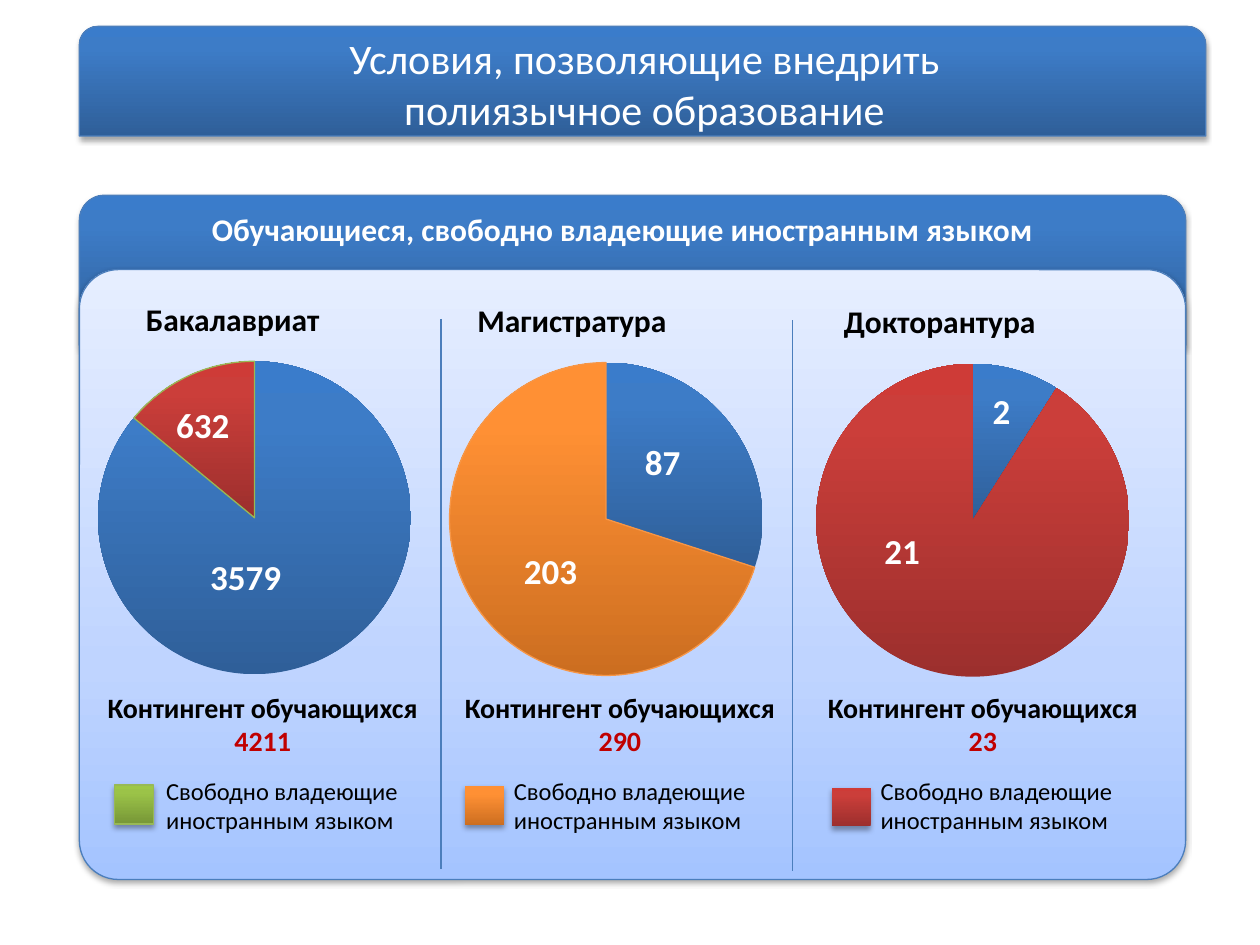
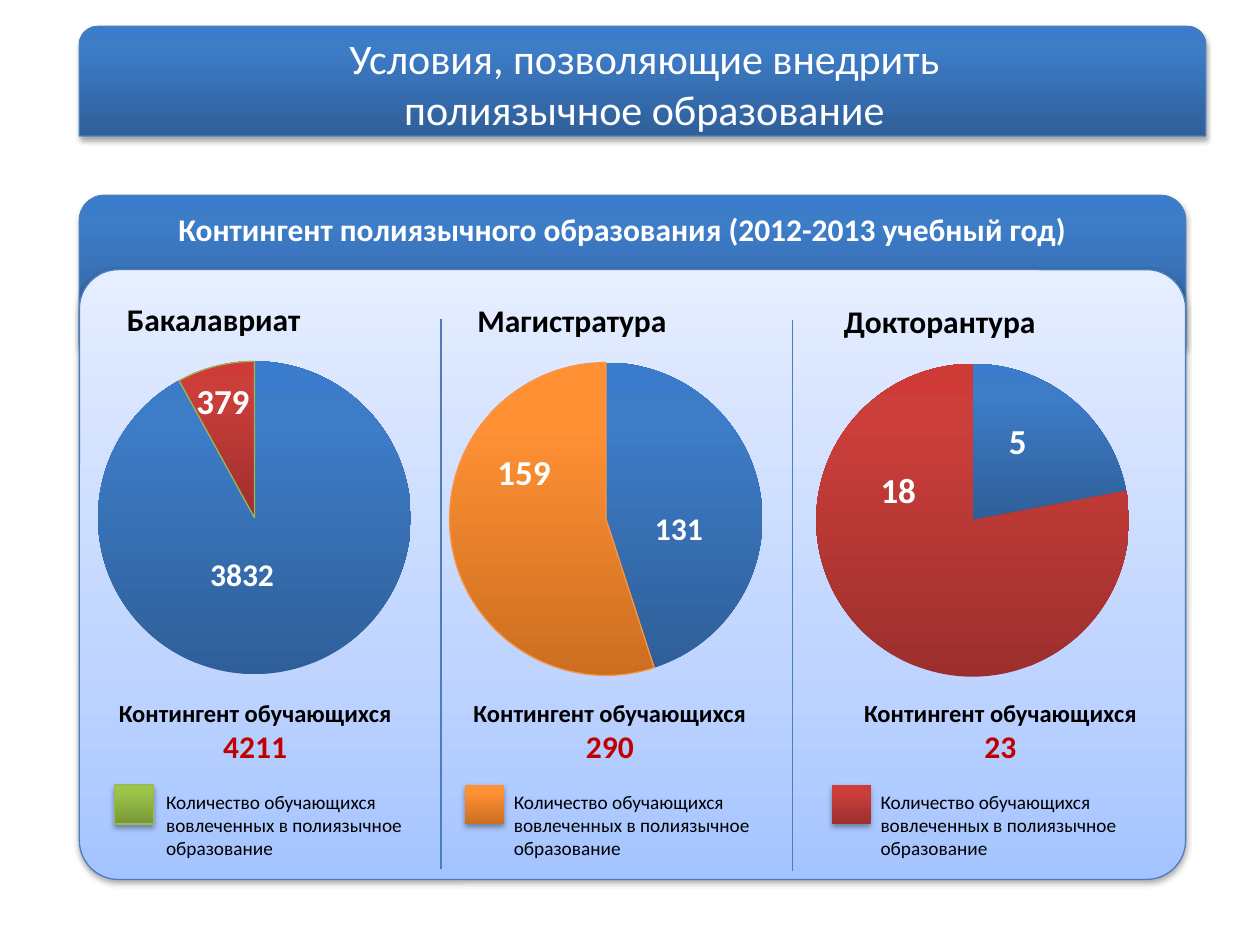
from dataclasses import dataclass
from typing import Optional

from lxml import etree
from pptx import Presentation
from pptx import util as u
from pptx.chart import data as chart_data
from pptx.dml import color, fill as dml_fill
from pptx.enum import chart as chart_enum, shapes, text
from pptx.oxml import ns, parse_xml

Stops = tuple[tuple[int, str], ...]
Box = tuple[float, float, float, float]


@dataclass(frozen=True)
class Theme:
    font: str = "Calibri"
    white: str = "FFFFFF"
    black: str = "000000"
    total: str = "C00000"
    outline: str = "4B7EBC"
    green_line: str = "98B955"
    orange_line: str = "F79646"
    blue: Stops = ((0, "2F5F99"), (80, "3D7CC7"), (100, "3A7CCB"))
    pale: Stops = ((0, "A4C4FF"), (35, "BFD4FF"), (100, "E6EEFF"))
    green: Stops = ((0, "779737"), (80, "9BC348"), (100, "9DC746"))
    orange: Stops = ((0, "CC6E20"), (80, "FF9034"), (100, "FF9136"))
    red: Stops = ((0, "9C2F2D"), (80, "CB3E3A"), (100, "CE3B37"))
    line_width: float = 0.75
    title_size: int = 24
    heading_size: int = 18
    value_size: int = 20


THEME = Theme()


@dataclass(frozen=True)
class Line:
    """One paragraph with its look."""
    words: str
    size: int
    colour: str = THEME.black
    bold: bool = True


@dataclass(frozen=True)
class Level:
    """What a study level keeps on every slide."""
    name: str
    pie_left: float
    swatch_left: float
    legend_left: float
    slice_fill: Stops
    swatch_fill: Stops
    slice_line: Optional[str] = None
    swatch_line: Optional[str] = None


@dataclass(frozen=True)
class Value:
    words: str
    left: float
    top: float
    size: int = THEME.value_size


@dataclass(frozen=True)
class Group:
    """Figures of one study level on one slide."""
    heading_left: float
    shares: tuple[int, int]
    values: tuple[Value, Value]
    total: str
    total_left: float
    total_width: float


@dataclass(frozen=True)
class Page:
    subtitle: str
    legend: str
    legend_top: float
    legend_size: int
    total_top: float
    total_label_size: int
    total_size: int
    swatch_step: float
    groups: tuple[Group, Group, Group]


TITLE = ("Условия, позволяющие внедрить", "полиязычное образование")
TOTAL_LABEL = "Контингент обучающихся"
STEP = 0.01  # each column sits slightly lower than the one before
PIE_SIZE = 2.76
SEPARATORS = (3.5, 6.29)

LEVELS = (
    Level("Бакалавриат", 0.64, 0.91, 1.22, THEME.red, THEME.green,
          THEME.green_line, THEME.green_line),
    Level("Магистратура", 3.43, 3.69, 3.98, THEME.orange, THEME.orange,
          THEME.orange_line),
    Level("Докторантура", 6.34, 6.6, 6.89, THEME.red, THEME.red),
)

PAGES = (
    Page("Обучающиеся, свободно владеющие иностранным языком",
         "Свободно владеющие иностранным языком", 6.11, 14, 5.43, 16, 16, STEP, (
             Group(1.06, (86, 14), (Value("3579", 1.57, 4.36), Value("632", 1.3, 3.15)),
                   "4211", 0.67, 2.83),
             Group(3.69, (30, 70), (Value("87", 5.02, 3.45), Value("203", 4.06, 4.31)),
                   "290", 3.58, 2.68),
             Group(6.6, (9, 91), (Value("2", 7.78, 3.04), Value("21", 6.92, 4.15)),
                   "23", 6.34, 2.92))),
    Page("Контингент полиязычного образования (2012-2013 учебный год)",
         "Количество обучающихся вовлеченных в полиязычное образование",
         6.22, 11, 5.49, 14, 18, 0, (
             Group(0.91, (92, 8), (Value("3832", 1.57, 4.36, 18), Value("379", 1.46, 2.96)),
                   "4211", 0.63, 2.79),
             Group(3.69, (45, 55), (Value("131", 5.1, 3.99, 18), Value("159", 3.85, 3.53)),
                   "290", 3.5, 2.68),
             Group(6.6, (22, 78), (Value("5", 7.91, 3.28), Value("18", 6.89, 3.67)),
                   "23", 6.6, 2.68))),
)


def inches(box: Box) -> list[u.Length]:
    return [u.Inches(side) for side in box]


def rgb(value: str) -> color.RGBColor:
    return color.RGBColor.from_string(value)


def paint_gradient(fill: dml_fill.FillFormat, stops: Stops) -> None:
    fill.gradient()
    fill.gradient_angle = 90
    stop_list = fill._xPr.find(ns.qn("a:gradFill")).find(ns.qn("a:gsLst"))
    for old_stop in list(stop_list):
        stop_list.remove(old_stop)
    for position, value in stops:
        stop = etree.SubElement(stop_list, ns.qn("a:gs"), pos=str(position * 1000))
        etree.SubElement(stop, ns.qn("a:srgbClr"), val=value)


def paint_line(line, colour: Optional[str]) -> None:
    if colour is None:
        line.fill.background()
    else:
        line.color.rgb = rgb(colour)
        line.width = u.Pt(THEME.line_width)


def add_block(slide, kind, box: Box, stops: Stops, outline: Optional[str],
              radius: Optional[float] = None) -> None:
    """Gradient shape with a soft shadow below it."""
    block = slide.shapes.add_shape(kind, *inches(box))
    if radius is not None:
        block.adjustments[0] = radius
    paint_gradient(block.fill, stops)
    paint_line(block.line, outline)
    block.shadow.inherit = False
    effects = block._element.spPr.find(ns.qn("a:effectLst"))
    shadow = etree.SubElement(effects, ns.qn("a:outerShdw"), blurRad=str(u.Pt(3.1)),
                              dist=str(u.Pt(1.8)), dir="5400000", rotWithShape="0")
    tint = etree.SubElement(shadow, ns.qn("a:srgbClr"), val=THEME.black)
    etree.SubElement(tint, ns.qn("a:alpha"), val="35000")


def write_lines(frame, lines: list[Line], centred: bool) -> None:
    frame.word_wrap = True
    frame.auto_size = text.MSO_AUTO_SIZE.SHAPE_TO_FIT_TEXT
    frame.vertical_anchor = text.MSO_ANCHOR.TOP
    for index, line in enumerate(lines):
        paragraph = frame.add_paragraph() if index else frame.paragraphs[0]
        paragraph.text = line.words
        paragraph.alignment = text.PP_ALIGN.CENTER if centred else text.PP_ALIGN.LEFT
        font = paragraph.font
        font.name, font.size, font.bold = THEME.font, u.Pt(line.size), line.bold
        font.color.rgb = rgb(line.colour)


def add_text(slide, box: Box, *lines: Line, centred: bool = False) -> None:
    write_lines(slide.shapes.add_textbox(*inches(box)).text_frame, list(lines), centred)


def add_separator(slide, left: float, top: float) -> None:
    separator = slide.shapes.add_connector(
        shapes.MSO_CONNECTOR.STRAIGHT, *inches((left, top, left, top + 4.37)))
    paint_line(separator.line, THEME.outline)
    etree.SubElement(separator._element.spPr, ns.qn("a:effectLst"))


def add_pie(slide, level: Level, top: float, shares: tuple[int, int]) -> None:
    figures = chart_data.CategoryChartData()
    figures.categories = ["1", "2"]
    figures.add_series("Series 1", shares)
    pie = slide.shapes.add_chart(
        chart_enum.XL_CHART_TYPE.PIE,
        *inches((level.pie_left, top, PIE_SIZE, PIE_SIZE)), figures).chart
    pie.has_legend = pie.has_title = False
    pie.font.name, pie.font.size = THEME.font, u.Pt(THEME.heading_size)
    pie.font.color.rgb = rgb(THEME.black)
    plot = pie.plots[0]
    plot.vary_by_categories = True
    looks = ((THEME.blue, None), (level.slice_fill, level.slice_line))
    for index, (stops, outline) in enumerate(looks):
        part = plot.series[0].points[index].format
        paint_gradient(part.fill, stops)
        paint_line(part.line, outline)
    # The pie fills 90 % of its frame
    area = pie._chartSpace.chart.plotArea
    for old_layout in area.findall(ns.qn("c:layout")):
        area.remove(old_layout)
    area.insert(0, parse_xml(
        f'<c:layout {ns.nsdecls("c")}><c:manualLayout><c:layoutTarget val="inner"/>'
        '<c:xMode val="edge"/><c:yMode val="edge"/><c:x val="0.05"/><c:y val="0.05"/>'
        '<c:w val="0.9"/><c:h val="0.9"/></c:manualLayout></c:layout>'))


def add_frame(slide, subtitle: str) -> None:
    """Title band, panel and subtitle shared by the slides."""
    tab = shapes.MSO_SHAPE.ROUND_2_SAME_RECTANGLE
    add_block(slide, tab, (0.63, 1.55, 8.78, 1.19), THEME.blue, THEME.outline)
    add_block(slide, shapes.MSO_SHAPE.ROUNDED_RECTANGLE, (0.63, 2.14, 8.78, 4.84),
              THEME.pale, THEME.outline, radius=0.064)
    add_block(slide, tab, (0.63, 0.21, 8.94, 0.87), THEME.blue, THEME.outline)
    title = slide.shapes.title
    title.left, title.top, title.width, title.height = inches((1.1, 0.21, 8.03, 0.91))
    write_lines(title.text_frame,
                [Line(words, THEME.title_size, THEME.white, False) for words in TITLE], True)
    slide.shapes._spTree.append(title._element)  # bring in front of its band
    add_text(slide, (1.1, 1.62, 7.68, 0.4),
             Line(subtitle, THEME.heading_size, THEME.white), centred=True)


def add_group(slide, page: Page, index: int) -> None:
    level, group, drop = LEVELS[index], page.groups[index], index * STEP
    add_text(slide, (group.heading_left, 2.33 + drop, 2.23, 0.4),
             Line(level.name, THEME.heading_size))
    add_pie(slide, level, 2.73 + drop, group.shares)
    for value in group.values:
        add_text(slide, (value.left, value.top, 0.9, 0.44),
                 Line(value.words, value.size, THEME.white))
    add_text(slide, (group.total_left, page.total_top, group.total_width, 0.64),
             Line(TOTAL_LABEL, page.total_label_size),
             Line(group.total, page.total_size, THEME.total), centred=True)
    add_block(slide, shapes.MSO_SHAPE.RECTANGLE,
              (level.swatch_left, 6.23 + index * page.swatch_step, 0.31, 0.31),
              level.swatch_fill, level.swatch_line)
    add_text(slide, (level.legend_left, page.legend_top, 2.2, 0.6),
             Line(page.legend, page.legend_size, bold=False))


def main() -> None:
    deck = Presentation()
    deck.slide_width, deck.slide_height = u.Inches(10), u.Inches(7.5)
    for page in PAGES:
        slide = deck.slides.add_slide(deck.slide_layouts[5])
        add_frame(slide, page.subtitle)
        for index in range(len(LEVELS)):
            add_group(slide, page, index)
        for index, left in enumerate(SEPARATORS):
            add_separator(slide, left, 2.53 + index * STEP)
    deck.save("out.pptx")


if __name__ == "__main__":
    main()
